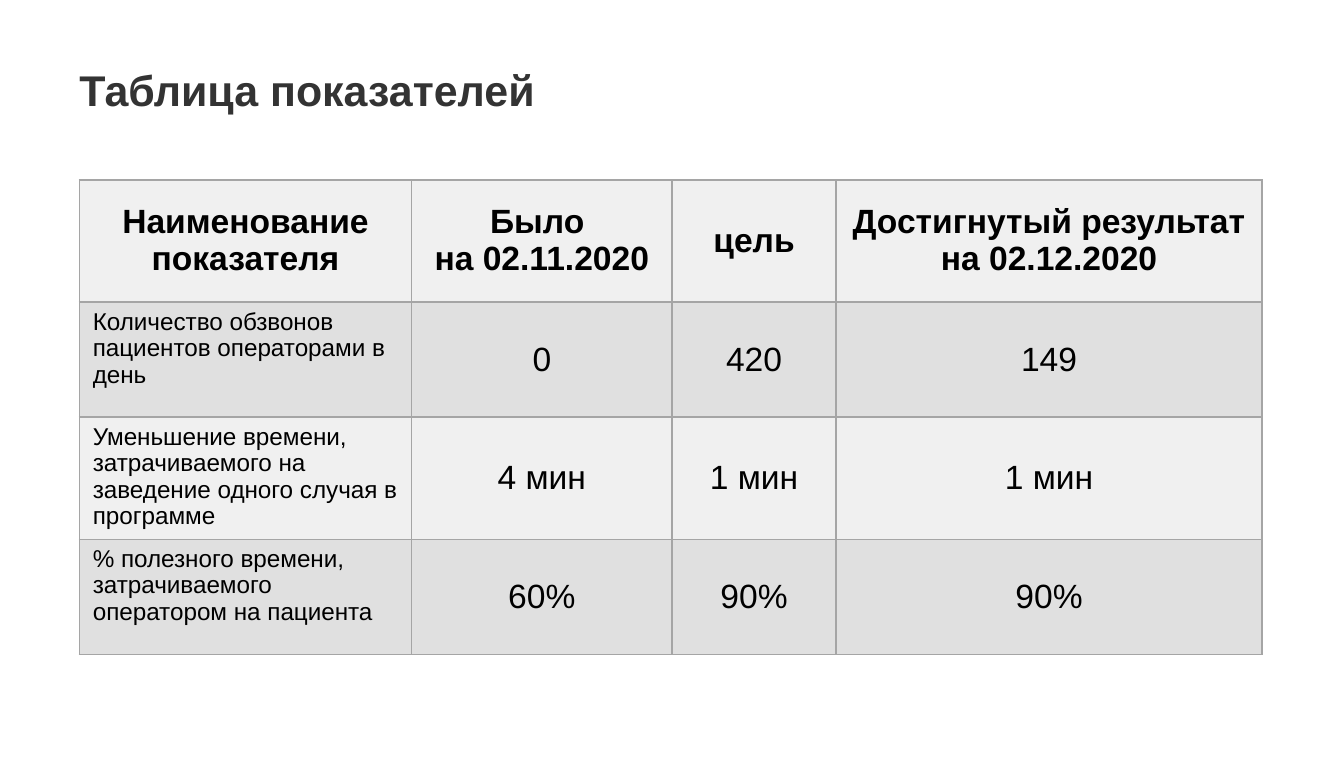
"""Build a slide with a table of indicators before and after a project."""
from dataclasses import dataclass

import pptx
import pptx.dml.color
import pptx.enum.text
import pptx.oxml
import pptx.oxml.ns
import pptx.util
from pptx.util import Cm

FONT = "Arial"
BLACK, TITLE_COLOR, BORDER = "000000", "333333", "A5A5A5"
BANDS = ("F0F0F0", "E0E0E0")
BORDER_WIDTH = pptx.util.Pt(0.96)
COLUMN_WIDTHS = (6.28, 4.92, 3.1, 8.05)
ROW_HEIGHTS = (2.31, 2.17, 2.31, 2.17)


@dataclass(frozen=True)
class TextStyle:
    size: float
    bold: bool = False
    centered: bool = True
    spacing: float = 1.0
    color: str = BLACK


TITLE = TextStyle(23, bold=True, centered=False, color=TITLE_COLOR)
HEADER = TextStyle(18, bold=True, spacing=0.98)
LABEL = TextStyle(13, centered=False, spacing=0.98)
VALUE = TextStyle(18)

ROWS = (
    ("Наименование показателя", "Было \nна 02.11.2020", "цель",
     "Достигнутый результат на 02.12.2020"),
    ("Количество обзвонов пациентов операторами в день", "0", "420", "149"),
    ("Уменьшение времени, затрачиваемого на заведение одного случая в программе",
     "4 мин", "1 мин", "1 мин"),
    ("% полезного времени, затрачиваемого оператором на пациента",
     "60%", "90%", "90%"),
)


def rgb(value: str) -> pptx.dml.color.RGBColor:
    return pptx.dml.color.RGBColor.from_string(value)


def set_text(tf: pptx.text.text.TextFrame, text: str, style: TextStyle) -> None:
    tf.text = text
    align = pptx.enum.text.PP_ALIGN
    for p in tf.paragraphs:
        p.alignment = align.CENTER if style.centered else align.LEFT
        p.line_spacing = style.spacing
        for r in p.runs:
            r.font.name = FONT
            r.font.size = pptx.util.Pt(style.size)
            r.font.bold = style.bold
            r.font.color.rgb = rgb(style.color)


def set_borders(cell: pptx.table._Cell) -> None:
    tc_pr = cell._tc.get_or_add_tcPr()
    for side in ("lnL", "lnR", "lnT", "lnB"):
        tc_pr.append(pptx.oxml.parse_xml(
            f'<a:{side} {pptx.oxml.ns.nsdecls("a")} w="{BORDER_WIDTH}">'
            f'<a:solidFill><a:srgbClr val="{BORDER}"/></a:solidFill></a:{side}>'))


def fill_cell(cell: pptx.table._Cell, text: str, style: TextStyle, color: str) -> None:
    anchor = pptx.enum.text.MSO_ANCHOR
    set_borders(cell)
    cell.fill.solid()
    cell.fill.fore_color.rgb = rgb(color)
    cell.vertical_anchor = anchor.TOP if style is LABEL else anchor.MIDDLE
    set_text(cell.text_frame, text, style)


def add_title(s: pptx.slide.Slide, text: str) -> None:
    tf = s.shapes.add_textbox(Cm(1.5), Cm(1.2), Cm(18.2), Cm(0.92)).text_frame
    tf.word_wrap = True
    tf.margin_left = tf.margin_right = tf.margin_top = tf.margin_bottom = 0
    set_text(tf, text, TITLE)


def add_indicators(s: pptx.slide.Slide) -> None:
    table = s.shapes.add_table(
        len(ROWS), len(COLUMN_WIDTHS), Cm(1.5), Cm(3.4),
        Cm(sum(COLUMN_WIDTHS)), Cm(sum(ROW_HEIGHTS))).table
    for column, width in zip(table.columns, COLUMN_WIDTHS):
        column.width = Cm(width)
    for i, (texts, height) in enumerate(zip(ROWS, ROW_HEIGHTS)):
        table.rows[i].height = Cm(height)
        for j, text in enumerate(texts):
            style = HEADER if i == 0 else LABEL if j == 0 else VALUE
            fill_cell(table.cell(i, j), text, style, BANDS[i % 2])


def main() -> None:
    prs = pptx.Presentation()
    prs.slide_width, prs.slide_height = Cm(25.4), Cm(14.3)
    s = prs.slides.add_slide(prs.slide_layouts[6])
    add_indicators(s)
    add_title(s, "Таблица показателей")
    prs.save("out.pptx")


if __name__ == "__main__":
    main()
